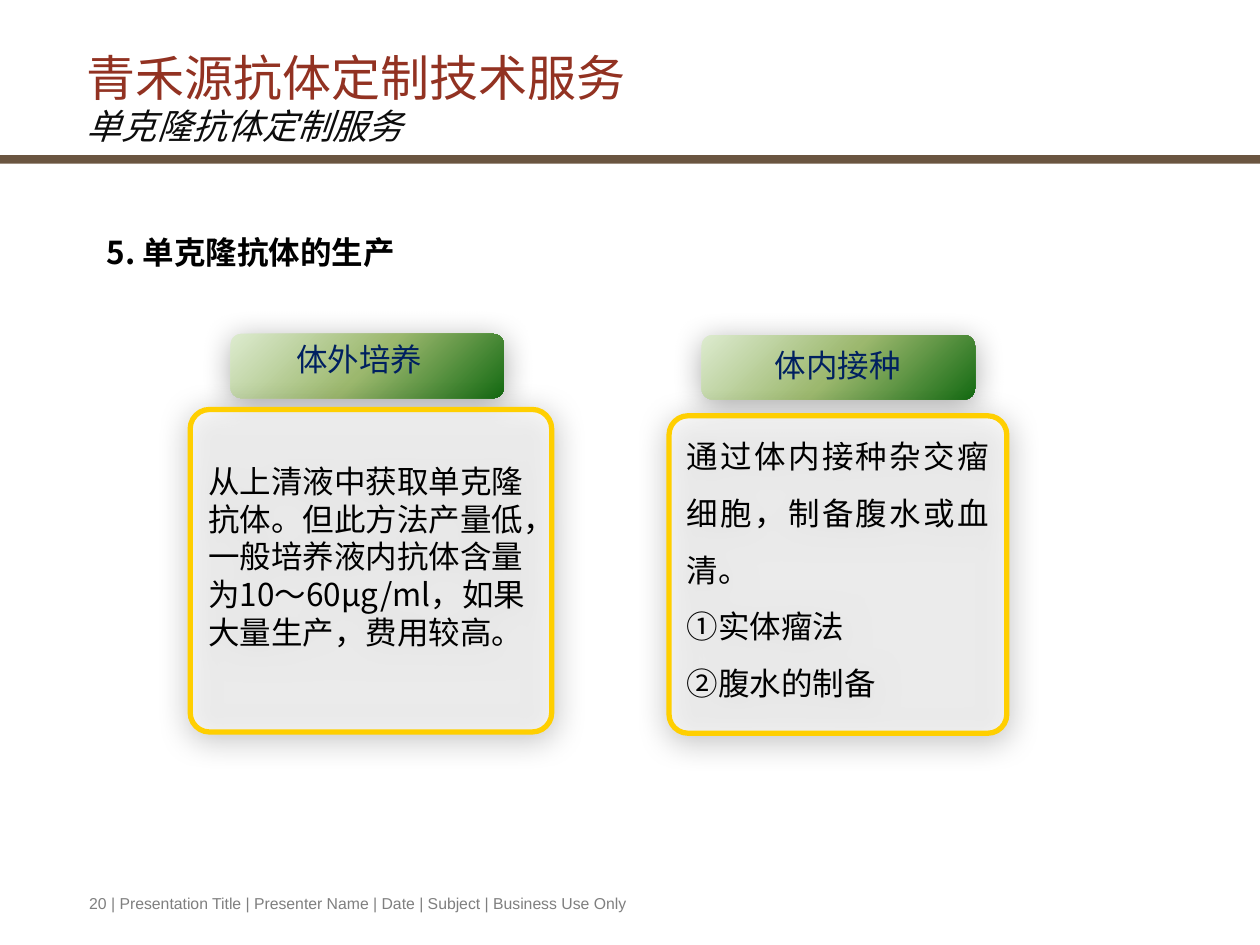
from copy import deepcopy

from lxml import etree
from pptx import Presentation
from pptx.dml.color import RGBColor
from pptx.enum import shapes, text
from pptx.oxml import ns
from pptx.util import Pt

TITLE, SUBTITLE = "青禾源抗体定制技术服务", "单克隆抗体定制服务"
HEADING = "5. 单克隆抗体的生产"
FOOTER = "20 | Presentation Title | Presenter Name | Date | Subject | Business Use Only"

LEFT, JUSTIFY, CENTER = text.PP_ALIGN.LEFT, text.PP_ALIGN.JUSTIFY, text.PP_ALIGN.CENTER
# Boxes are (left, top, width, height) in points
METHODS = [
    dict(label="体外培养", tab=(131.8, 190.8, 156.2, 36.7), label_box=(136.1, 190.8, 138.2, 29),
         card=(108.7, 234, 206.6, 184.3), align=LEFT, spacing=1,
         lines=["从上清液中获取单克隆抗体。但此方法产量低，一般培养液内抗体"
                "含量为10～60μg/ml，如果大量生产，费用较高。"]),
    dict(label="体内接种", tab=(401, 191.5, 156.2, 36.7), label_box=(409.7, 194.4, 138.2, 29),
         card=(382.3, 237.6, 193, 181.4), align=JUSTIFY, spacing=1.5,
         lines=["通过体内接种杂交瘤细胞，制备腹水或血清。", "①实体瘤法", "②腹水的制备"]),
]

CJK, LATIN = "Noto Sans CJK SC", "Arial"
BLACK = RGBColor(0, 0, 0)
WHITE = RGBColor(0xFF, 0xFF, 0xFF)
BROWN = RGBColor(0x6A, 0x55, 0x40)
RED = RGBColor(0x92, 0x32, 0x22)
NEAR_BLACK = RGBColor(0x0D, 0x0D, 0x0D)
GRAY = RGBColor(0x7F, 0x7F, 0x7F)
NAVY = RGBColor(0x00, 0x20, 0x60)
YELLOW = RGBColor(0xFF, 0xCF, 0x00)
GREENS = [(0, RGBColor(0xDD, 0xEB, 0xCF)), (0.5, RGBColor(0x9C, 0xB8, 0x6E)),
          (1, RGBColor(0x15, 0x6B, 0x13))]


def add_xml(parent, tag, **attributes):
    return etree.SubElement(parent, ns.qn(tag), attributes)


def style(run, size, color, face=CJK, bold=False, italic=False):
    font = run.font
    font.name, font.size, font.bold, font.italic = face, Pt(size), bold, italic
    font.color.rgb = color
    add_xml(run._r.get_or_add_rPr(), "a:ea", typeface=face)


def fill_frame(frame, lines, size, color, align=LEFT, spacing=1, **look):
    frame.word_wrap = True
    frame.text = "\n".join(lines)
    for paragraph in frame.paragraphs:
        paragraph.alignment, paragraph.line_spacing = align, spacing
        for run in paragraph.runs:
            style(run, size, color, **look)


def add_text(slide, box, content, size, color, **look):
    frame = slide.shapes.add_textbox(*map(Pt, box)).text_frame
    fill_frame(frame, [content], size, color, **look)


def add_block(slide, kind, box):
    block = slide.shapes.add_shape(kind, *map(Pt, box))
    block.shadow.inherit = False
    block.line.fill.background()
    return block


def add_shadow(block):
    effects = block._element.spPr.find(ns.qn("a:effectLst"))
    shadow = add_xml(effects, "a:outerShdw", blurRad=str(Pt(17.8)), dist=str(Pt(3)),
                     dir=str(87 * 60000), algn="ctr", rotWithShape="0")
    add_xml(add_xml(shadow, "a:srgbClr", val="000000"), "a:alpha", val="33000")


def fill_gradient(block):
    block.fill.gradient()
    block.fill.gradient_angle = 315
    stops = block._element.spPr.find(".//" + ns.qn("a:gsLst"))
    stops.append(deepcopy(stops[-1]))
    for stop, (position, color) in zip(block.fill.gradient_stops, GREENS):
        stop.position, stop.color.rgb = position, color


def add_title(slide):
    title = slide.shapes.title
    title.left, title.top, title.width, title.height = map(Pt, (42.5, 25.2, 653, 62.6))
    frame = title.text_frame
    frame.auto_size = text.MSO_AUTO_SIZE.NONE
    frame.vertical_anchor = text.MSO_ANCHOR.BOTTOM
    fill_frame(frame, [TITLE + "\v" + SUBTITLE], 28, RED, spacing=0.95)
    style(frame.paragraphs[0].runs[1], 20, NEAR_BLACK, italic=True)


def add_method(slide, method):
    rounded = shapes.MSO_SHAPE.ROUNDED_RECTANGLE
    tab = add_block(slide, rounded, method["tab"])
    fill_gradient(tab)
    add_shadow(tab)
    add_text(slide, method["label_box"], method["label"], 18, NAVY, align=CENTER)

    card = add_block(slide, rounded, method["card"])
    card.adjustments[0] = 0.06
    card.fill.solid()
    card.fill.fore_color.rgb = WHITE
    add_xml(card._element.spPr.find(".//" + ns.qn("a:srgbClr")), "a:alpha", val="60000")
    card.line.color.rgb, card.line.width = YELLOW, Pt(3)
    add_shadow(card)
    frame = card.text_frame
    frame.vertical_anchor = text.MSO_ANCHOR.MIDDLE
    frame.margin_bottom = Pt(20)
    fill_frame(frame, method["lines"], 18, BLACK,
               align=method["align"], spacing=method["spacing"])


def main():
    deck = Presentation()
    deck.slide_width, deck.slide_height = Pt(720), Pt(540)
    slide = deck.slides.add_slide(deck.slide_layouts[5])
    rule = add_block(slide, shapes.MSO_SHAPE.RECTANGLE, (0, 88.6, 720, 5))
    rule.fill.solid()
    rule.fill.fore_color.rgb = BROWN
    add_title(slide)
    add_text(slide, (43.9, 506.9, 514, 18), FOOTER, 9, GRAY, face=LATIN)
    add_text(slide, (54, 129.6, 180, 29), HEADING, 18, BLACK, bold=True)
    for method in METHODS:
        add_method(slide, method)
    deck.save("out.pptx")


if __name__ == "__main__":
    main()
